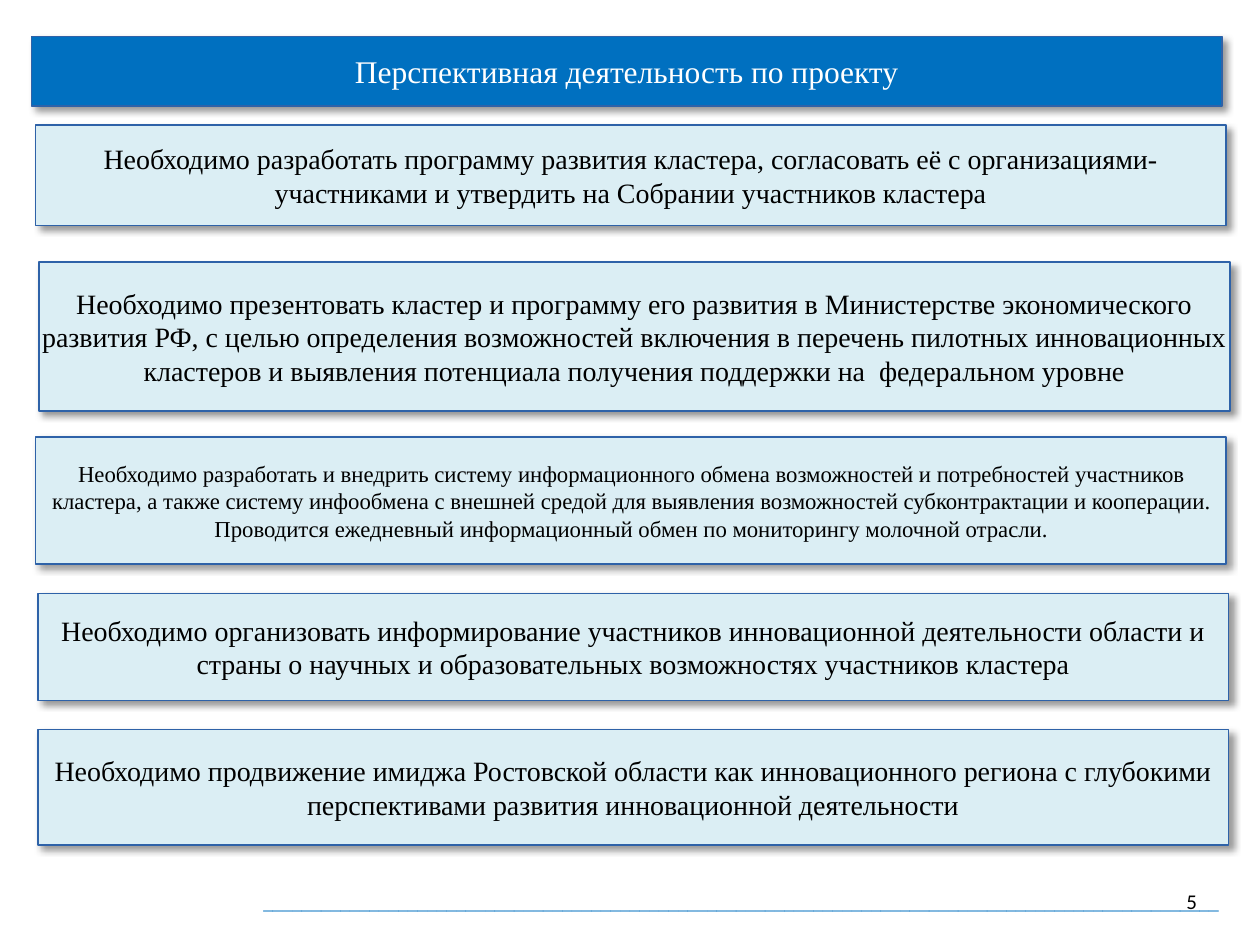
from lxml.etree import SubElement as Sub
from pptx import Presentation
from pptx.dml.color import RGBColor
from pptx.enum.shapes import MSO_SHAPE as Shape
from pptx.enum.text import MSO_ANCHOR as Anchor, PP_ALIGN as Align
from pptx.oxml.ns import qn
from pptx.util import Pt

SERIF = "Times New Roman"
BLUE, PALE, EDGE = "0070C0", "DBEEF4", "2E62A8"
WIDTH = 680.4

TITLE = "Перспективная деятельность по проекту"
# left, top, height, text size, text
TASKS = [
    (20.2, 71.3, 57.6, 16,
     "Необходимо разработать программу развития кластера, согласовать её с "
     "организациями-участниками и утвердить на Собрании участников кластера"),
    (22.3, 149.8, 85, 16,
     "Необходимо презентовать кластер и программу его развития в Министерстве "
     "экономического развития РФ, с целью определения возможностей включения в "
     "перечень пилотных инновационных кластеров и выявления потенциала получения "
     "поддержки на  федеральном уровне"),
    (20.2, 249.8, 72.7, 13,
     "Необходимо разработать и внедрить систему информационного обмена "
     "возможностей и потребностей участников кластера, а также систему "
     "инфообмена с внешней средой для выявления возможностей субконтрактации и "
     "кооперации. Проводится ежедневный информационный обмен по мониторингу "
     "молочной отрасли."),
    (21.6, 339.1, 61.2, 16,
     "Необходимо организовать информирование участников инновационной "
     "деятельности области и страны о научных и образовательных возможностях "
     "участников кластера"),
    (21.6, 416.9, 66.2, 16,
     "Необходимо продвижение имиджа Ростовской области как инновационного "
     "региона с глубокими перспективами развития инновационной деятельности"),
]


def tint(code):
    return RGBColor.from_string(code)


def write(shape, text, size, color="000000", font=SERIF,
          align=Align.CENTER, anchor=Anchor.MIDDLE):
    frame = shape.text_frame
    frame.word_wrap = True
    frame.vertical_anchor = anchor
    frame.margin_left = frame.margin_right = 0
    frame.margin_top = frame.margin_bottom = 0
    para = frame.paragraphs[0]
    para.alignment = align
    run = para.add_run()
    run.text = text
    run.font.name = font
    run.font.size = Pt(size)
    run.font.color.rgb = tint(color)


def shade(shape):
    """Cast a soft black shadow to the lower right."""
    shape.shadow.inherit = False
    effects = shape._element.spPr.find(qn("a:effectLst"))
    outer = Sub(effects, qn("a:outerShdw"), blurRad=str(Pt(4)), dist=str(Pt(3)),
                dir="2700000", algn="tl", rotWithShape="0")
    black = Sub(outer, qn("a:srgbClr"), val="000000")
    Sub(black, qn("a:alpha"), val="40000")


def add_bar(slide, left, top, height, fill):
    bar = slide.shapes.add_shape(Shape.RECTANGLE, Pt(left), Pt(top),
                                 Pt(WIDTH), Pt(height))
    bar.fill.solid()
    bar.fill.fore_color.rgb = tint(fill)
    bar.line.color.rgb = tint(EDGE)
    bar.line.width = Pt(1)
    shade(bar)
    return bar


def add_note(slide, left, top, width, height, text, size, **style):
    box = slide.shapes.add_textbox(Pt(left), Pt(top), Pt(width), Pt(height))
    write(box, text, size, **style)


def main():
    deck = Presentation()
    deck.slide_width, deck.slide_height = Pt(720), Pt(540)
    slide = deck.slides.add_slide(deck.slide_layouts[6])

    write(add_bar(slide, 18, 20.9, 39.6, BLUE), TITLE, 18, "FFFFFF")
    add_note(slide, 516.2, 500.4, 167.8, 28.8, "5", 12,
             font="Calibri", align=Align.RIGHT)
    add_note(slide, 150.5, 509, 561.6, 11.5, "_" * 99, 11,
             color=BLUE, align=Align.LEFT, anchor=Anchor.TOP)
    for left, top, height, size, text in TASKS:
        write(add_bar(slide, left, top, height, PALE), text, size)

    deck.save("out.pptx")


if __name__ == "__main__":
    main()
